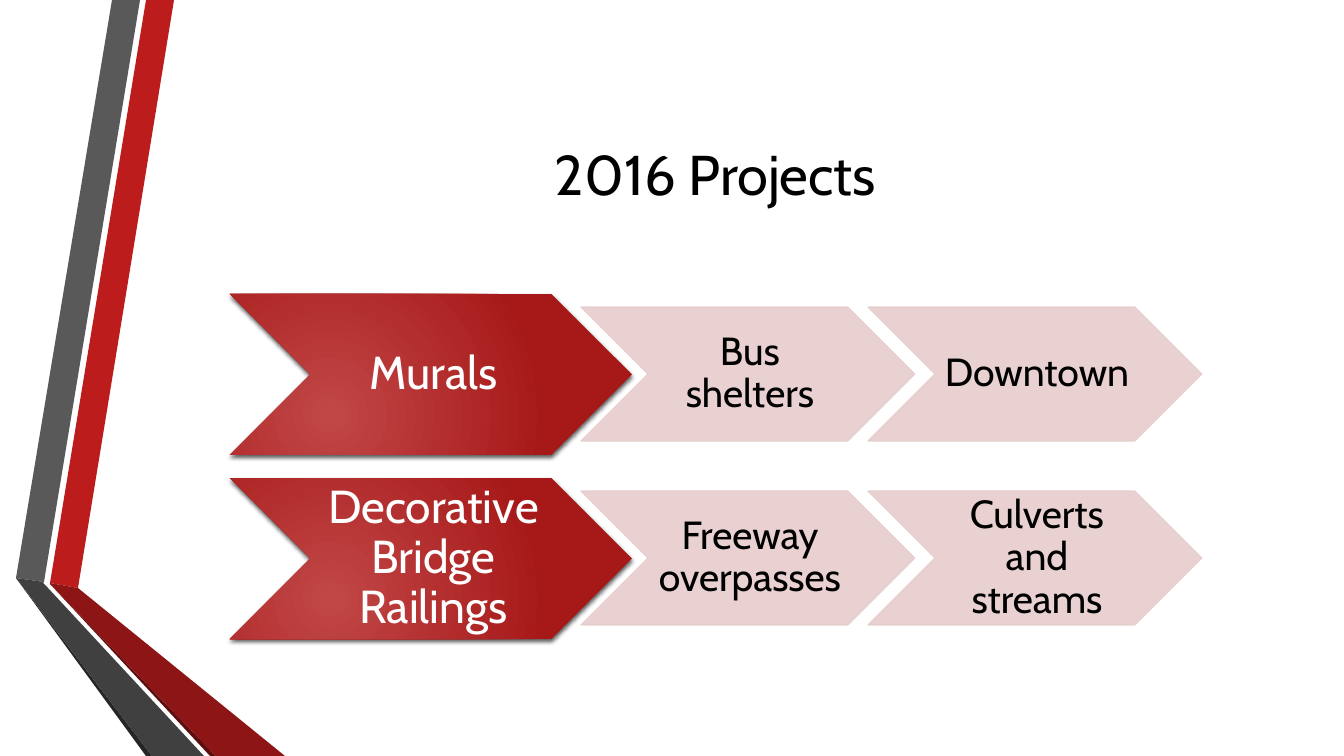
from dataclasses import dataclass

from lxml import etree
from pptx import Presentation
from pptx import util as u
from pptx.dml.color import RGBColor
from pptx.enum import shapes, text
from pptx.oxml import parse_xml
from pptx.oxml.ns import nsdecls, qn

WIDTH, HEIGHT = 1344, 756
SCALE = u.Inches(7.5) / HEIGHT


@dataclass(frozen=True)
class Theme:
    font: str = "Cabin"
    title_size: int = 40
    lead_size: int = 33
    detail_size: int = 28
    dark: str = "000000"
    light: str = "FFFFFF"
    lead_inner: str = "C14747"
    lead_outer: str = "A71919"
    detail: str = "E7CDCD"


THEME = Theme()

# Ribbon facets: colour and outline in px, from back to front
RIBBON = [
    ("BC1C1C", [(50, 583), (78, 588), (174, 0), (146, 0)]),
    ("595959", [(140, 0), (112, 0), (16, 578), (44, 582)]),
    ("262626", [(16, 578), (146, 756), (152, 756)]),
    ("5E0E0E", [(50, 584), (210, 756), (216, 756)]),
    ("8D1515", [(50, 584), (216, 756), (285, 756), (78, 588), (50, 583)]),
    ("404040", [(204, 756), (48, 588), (43, 583), (44, 582), (16, 578), (152, 756)]),
]

PROJECTS = [
    ("Murals", ["Bus shelters", "Downtown"]),
    ("Decorative Bridge Railings", ["Freeway overpasses", "Culverts and streams"]),
]


def px(*lengths):
    return [u.Emu(round(n * SCALE)) for n in lengths]


def style(p, size, color):
    p.alignment = text.PP_ALIGN.CENTER
    p.font.name, p.font.size = THEME.font, u.Pt(size)
    p.font.color.rgb = RGBColor.from_string(color)


def add_ribbon(slide, left, top):
    for color, points in RIBBON:
        start, *rest = [(left + x, top + y) for x, y in points]
        builder = slide.shapes.build_freeform(*start, scale=SCALE)
        builder.add_line_segments(rest, close=True)
        sp = builder.convert_to_shape()
        sp.shadow.inherit = False
        sp.fill.solid()
        sp.fill.fore_color.rgb = RGBColor.from_string(color)
        sp.line.fill.background()


def add_title(slide, wording, box):
    title = slide.shapes.title
    title.left, title.top, title.width, title.height = px(*box)
    tf = title.text_frame
    tf.text = wording
    tf.vertical_anchor = text.MSO_ANCHOR.MIDDLE
    style(tf.paragraphs[0], THEME.title_size, THEME.dark)
    slide.shapes._spTree.append(title._element)  # in front of the ribbon


def add_chevron(slide, wording, box, size, color, inset):
    sp = slide.shapes.add_shape(shapes.MSO_SHAPE.CHEVRON, *px(*box))
    sp.shadow.inherit = False
    tf = sp.text_frame
    tf.word_wrap = True
    tf.vertical_anchor = text.MSO_ANCHOR.MIDDLE
    tf.margin_left, tf.margin_top, tf.margin_right, tf.margin_bottom = px(inset, 2, 0, 2)
    p = tf.paragraphs[0]
    p.text = wording
    p.line_spacing = 0.9
    style(p, size, color)
    return sp


def add_lead(slide, wording, box):
    sp = add_chevron(slide, wording, box, THEME.lead_size, THEME.light, 5)
    sp.line.fill.background()
    props = sp._element.spPr
    # Radial gradient
    props.find(qn("a:prstGeom")).addnext(parse_xml(
        f'<a:gradFill {nsdecls("a")} rotWithShape="1"><a:gsLst>'
        f'<a:gs pos="0"><a:srgbClr val="{THEME.lead_inner}"/></a:gs>'
        f'<a:gs pos="100000"><a:srgbClr val="{THEME.lead_outer}"/></a:gs></a:gsLst>'
        '<a:path path="circle"><a:fillToRect l="50000" t="100000" r="100000" b="50000"/>'
        '</a:path></a:gradFill>'))
    # Soft shadow below
    props.find(qn("a:effectLst")).append(parse_xml(
        f'<a:outerShdw {nsdecls("a")} blurRad="{u.Pt(3)}" dist="{u.Pt(2)}" dir="5400000" '
        f'rotWithShape="0"><a:srgbClr val="{THEME.dark}"><a:alpha val="64000"/></a:srgbClr>'
        '</a:outerShdw>'))


def add_detail(slide, wording, box):
    sp = add_chevron(slide, wording, box, THEME.detail_size, THEME.dark, 4)
    sp.fill.solid()
    sp.fill.fore_color.rgb = sp.line.color.rgb = RGBColor.from_string(THEME.detail)
    sp.line.width = u.Pt(0.75)
    for color in sp._element.spPr.iter(qn("a:srgbClr")):
        etree.SubElement(color, qn("a:alpha")).set("val", "90000")


def add_project_row(slide, lead, details, left, top):
    add_lead(slide, lead, (left, top, 402, 161))
    for i, wording in enumerate(details):
        add_detail(slide, wording, (left + 351 + 287 * i, top + 13, 334, 134))


def main():
    prs = Presentation()
    prs.slide_width, prs.slide_height = px(WIDTH, HEIGHT)
    slide = prs.slides.add_slide(prs.slide_layouts[5])
    add_ribbon(slide, 0, 0)
    add_title(slide, "2016 Projects", (163, 76, 1105, 194))
    for i, (lead, details) in enumerate(PROJECTS):
        add_project_row(slide, lead, details, 230, 294 + 184 * i)
    prs.save("out.pptx")


if __name__ == "__main__":
    main()
